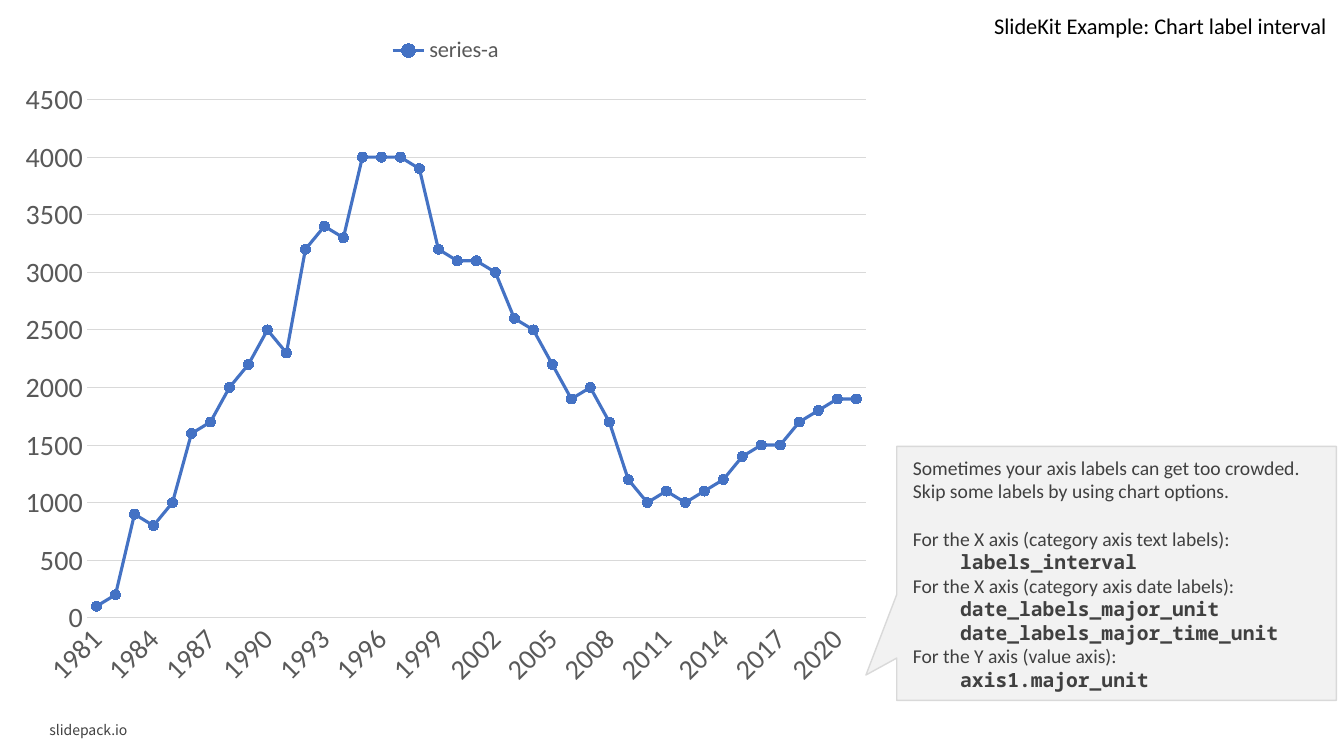
from lxml import etree
from pptx import Presentation
from pptx.chart.data import CategoryChartData
from pptx.dml.color import RGBColor
from pptx.enum.chart import XL_CHART_TYPE, XL_LEGEND_POSITION, XL_MARKER_STYLE, XL_TICK_MARK
from pptx.enum.shapes import MSO_SHAPE
from pptx.enum.text import MSO_ANCHOR, MSO_AUTO_SIZE, PP_ALIGN
from pptx.oxml.ns import qn
from pptx.util import Inches, Pt

BLACK = RGBColor(0x00, 0x00, 0x00)
DARK = RGBColor(0x40, 0x40, 0x40)
GRAY = RGBColor(0x59, 0x59, 0x59)
RULE = RGBColor(0xD9, 0xD9, 0xD9)
PALE = RGBColor(0xF2, 0xF2, 0xF2)
BLUE = RGBColor(0x44, 0x72, 0xC4)

FIRST_YEAR = 1981
VALUES = [
    100, 200, 900, 800, 1000, 1600, 1700, 2000, 2200, 2500, 2300, 3200, 3400, 3300,
    4000, 4000, 4000, 3900, 3200, 3100, 3100, 3000, 2600, 2500, 2200, 1900, 2000,
    1700, 1200, 1000, 1100, 1000, 1100, 1200, 1400, 1500, 1500, 1700, 1800, 1900, 1900,
]

INTRO = "Sometimes your axis labels can get too crowded. Skip some labels by using chart options."
OPTIONS = [
    ("For the X axis (category axis text labels):", ["labels_interval"]),
    ("For the X axis (category axis date labels):",
     ["date_labels_major_unit", "date_labels_major_time_unit"]),
    ("For the Y axis (value axis):", ["axis1.major_unit"]),
]


class ChartSlide:
    """Places elements by percentages of the slide's width and height."""

    text_font = "Calibri"
    code_font = "Noto Sans Mono"
    footer_font = "Noto Sans CJK JP"

    def __init__(self, deck):
        self.deck = deck
        self.page = deck.slides.add_slide(deck.slide_layouts[6])

    def area(self, left, top, width, height):
        across, down = self.deck.slide_width / 100, self.deck.slide_height / 100
        return [int(left * across), int(top * down), int(width * across), int(height * down)]

    def style(self, font, size, color, name=text_font, bold=False):
        font.size, font.name, font.bold = Pt(size), name, bold
        font.color.rgb = color

    def label(self, area, text, size, color, name=text_font, align=PP_ALIGN.LEFT, wrap=True):
        box = self.page.shapes.add_textbox(*self.area(*area))
        frame = box.text_frame
        frame.text = text
        frame.word_wrap = wrap
        frame.vertical_anchor = MSO_ANCHOR.MIDDLE
        if not wrap:
            frame.auto_size = MSO_AUTO_SIZE.SHAPE_TO_FIT_TEXT
        para = frame.paragraphs[0]
        para.alignment = align
        self.style(para.runs[0].font, size, color, name)

    def line_chart(self, area, name, categories, values, label_interval, major_unit):
        data = CategoryChartData()
        data.categories = categories
        data.add_series(name, values)
        chart = self.page.shapes.add_chart(
            XL_CHART_TYPE.LINE_MARKERS, *self.area(*area), data).chart
        self.style(chart.font, 10, BLACK)
        chart.has_title = False
        chart.has_legend = True
        chart.legend.position = XL_LEGEND_POSITION.TOP
        chart.legend.include_in_layout = False
        self.style(chart.legend.font, 16, GRAY)

        # Series line and markers
        plot = chart.plots[0]
        plot.vary_by_categories = False
        series = plot.series[0]
        series.smooth = False
        series.format.line.color.rgb = BLUE
        series.format.line.width = Pt(2.25)
        marker = series.marker
        marker.style, marker.size = XL_MARKER_STYLE.CIRCLE, 7
        marker.format.fill.solid()
        marker.format.fill.fore_color.rgb = BLUE
        marker.format.line.color.rgb = BLUE

        # Axes
        for axis in (chart.category_axis, chart.value_axis):
            axis.major_tick_mark = axis.minor_tick_mark = XL_TICK_MARK.NONE
            self.style(axis.tick_labels.font, 20, GRAY)
        years, amounts = chart.category_axis, chart.value_axis
        amounts.minimum_scale, amounts.maximum_scale = 0, 4500
        amounts.major_unit = major_unit
        amounts.has_major_gridlines = True
        amounts.format.line.fill.background()
        for line in (years.format.line, amounts.major_gridlines.format.line):
            line.color.rgb = RULE
            line.width = Pt(0.75)

        # Slanted labels, shown at the given interval
        axis_xml = years._element
        axis_xml.find(qn("c:txPr")).find(qn("a:bodyPr")).set("rot", "-2700000")
        skip = etree.Element(qn("c:tickLblSkip"))
        skip.set("val", str(label_interval))
        axis_xml.find(qn("c:noMultiLvlLbl")).addprevious(skip)

    def callout(self, area, tip, intro, options):
        shape = self.page.shapes.add_shape(MSO_SHAPE.RECTANGULAR_CALLOUT, *self.area(*area))
        shape.adjustments[0], shape.adjustments[1] = tip
        shape.shadow.inherit = False
        shape.fill.solid()
        shape.fill.fore_color.rgb = PALE
        shape.line.color.rgb = RULE
        shape.line.width = Pt(1)
        frame = shape.text_frame
        frame.word_wrap = True
        frame.vertical_anchor = MSO_ANCHOR.MIDDLE
        frame.margin_left = frame.margin_right = Inches(0.16)
        frame.margin_top = frame.margin_bottom = Inches(0.16)

        lines = [(intro, False)]
        for heading, names in options:
            lines += [(heading, False)] + [(name, True) for name in names]
        frame.text = "\n".join(text for text, _ in lines)
        for para, (_, is_code) in zip(frame.paragraphs, lines):
            para.alignment = PP_ALIGN.LEFT
            if is_code:
                para._p.get_or_add_pPr().set("marL", str(Inches(0.47)))
            name = self.code_font if is_code else self.text_font
            self.style(para.runs[0].font, 14, DARK, name, is_code)
        frame.paragraphs[1].space_before = Pt(17)


def main():
    deck = Presentation()
    deck.slide_width, deck.slide_height = Inches(13.33), Inches(7.5)
    slide = ChartSlide(deck)

    # Footer and title
    slide.label((2.93, 94.93, 21.83, 3.33), "slidepack.io", 10, DARK, slide.footer_font)
    slide.label((71.62, 0.93, 27.83, 4.93), "SlideKit Example: Chart label interval",
                16, BLACK, align=PP_ALIGN.RIGHT, wrap=False)

    # Yearly chart
    years = [str(FIRST_YEAR + step) for step in range(len(VALUES))]
    slide.line_chart((0.6, 3.33, 65.12, 89.33), "series-a", years, VALUES,
                     label_interval=3, major_unit=500)

    # Explanation
    slide.callout((66.72, 59.05, 32.71, 33.6), (-0.57, 0.4), INTRO, OPTIONS)
    deck.save("out.pptx")


if __name__ == "__main__":
    main()
